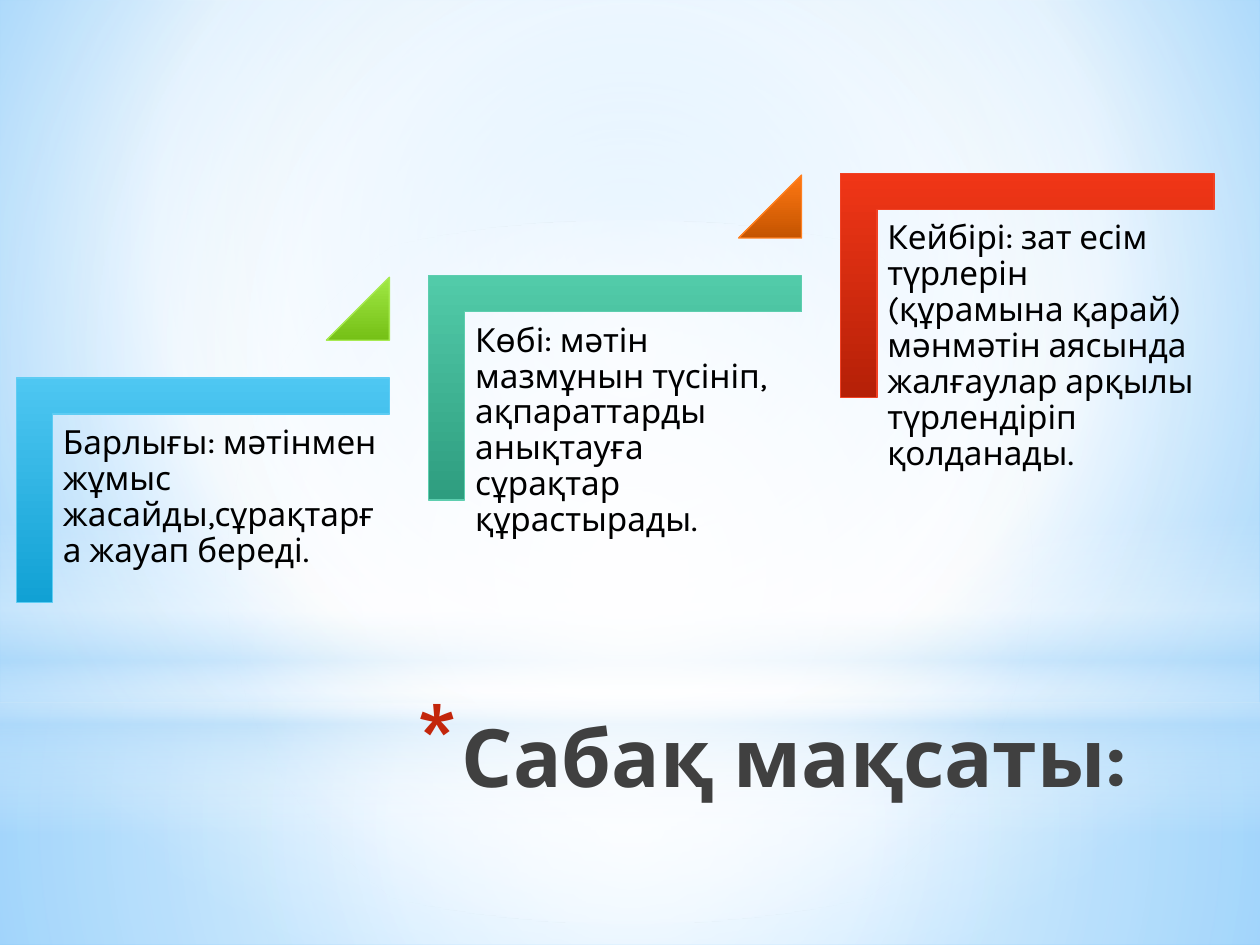
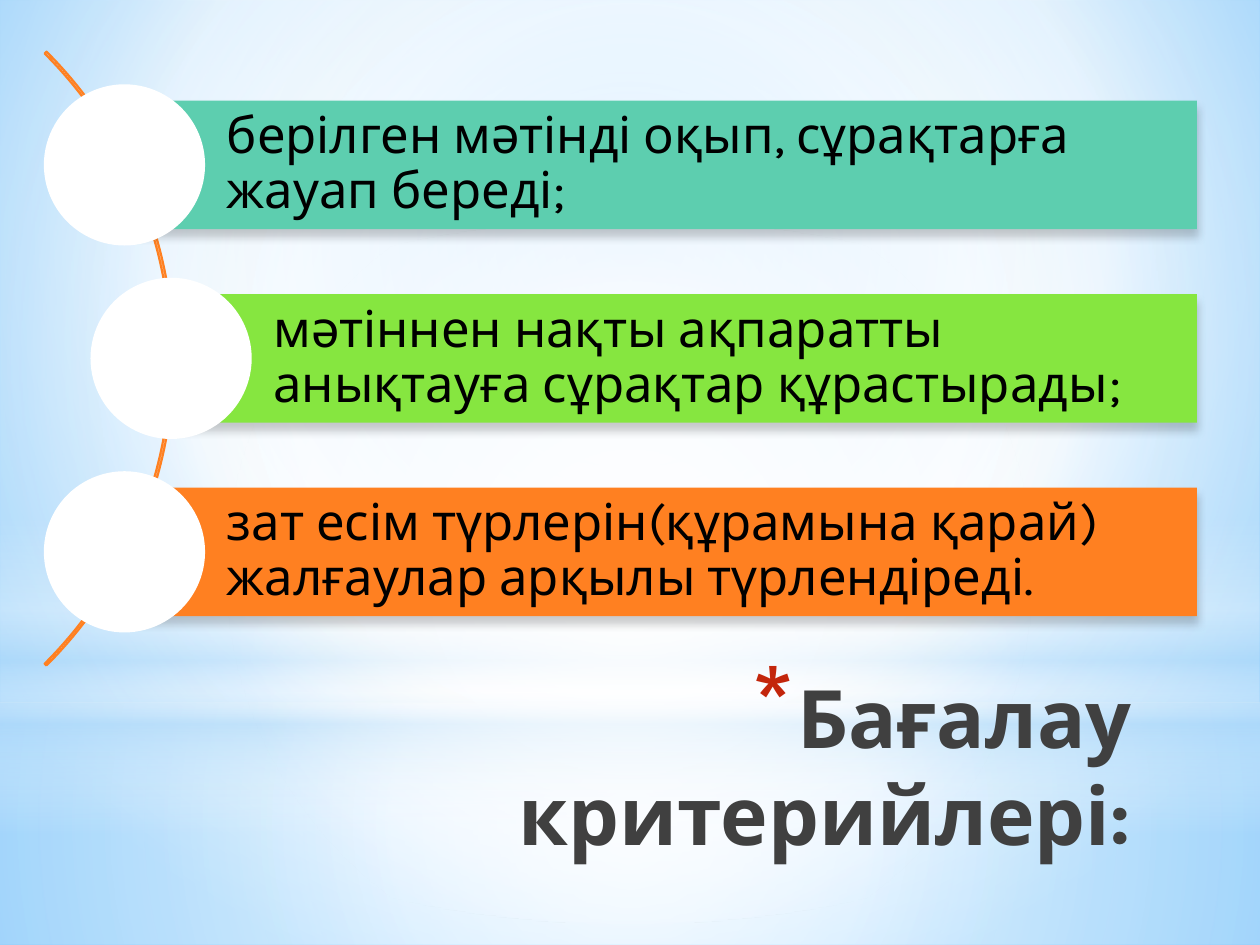
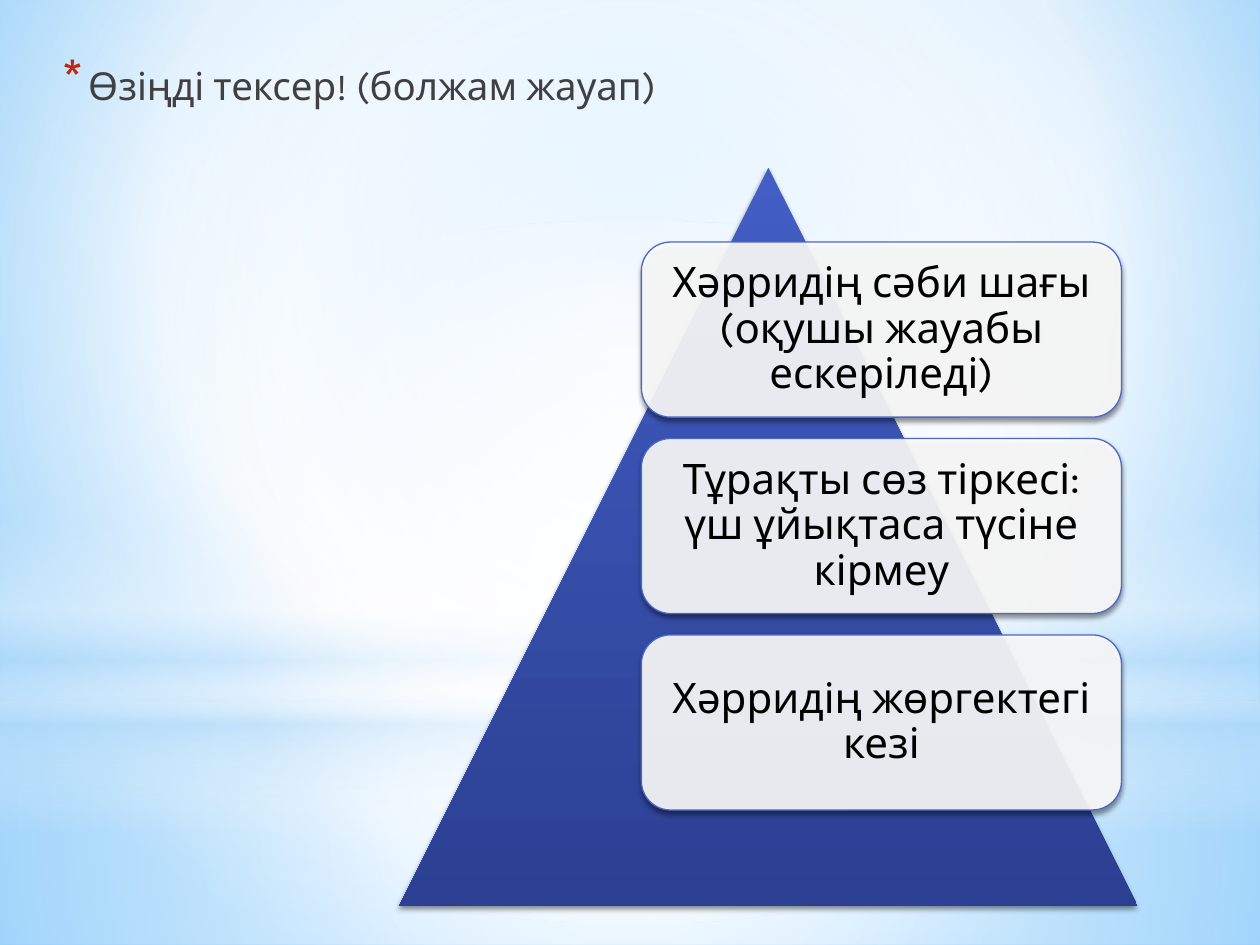
"""Build three lesson slides: goals, assessment criteria and a self-check pyramid."""
from lxml import etree
from pptx import Presentation
from pptx import util as u
from pptx.dml.color import RGBColor
from pptx.enum import shapes, text
from pptx.oxml.ns import qn

FONT = "Karla"
BLACK, GREY, WHITE, BULLET_RED = "000000", "404040", "FFFFFF", "C3260C"
PALE = "B4DCFA"
WIDTH, HEIGHT = 25.4, 19.05
KIND = shapes.MSO_SHAPE
CENTRE = (50, 50, 50, 50)

BACKGROUND = [(0, "9ED5FF"), (60, WHITE), (100, "5BB9FF")]
BACKGROUND_FOCUS = (20, 10, 20, 60)
GLOWS = [
    (KIND.RECTANGLE, 14.17, 4.88, CENTRE, [(0, WHITE, 91), (37, WHITE, 76), (100, PALE, 79)]),
    (KIND.RECTANGLE, 0, 14.17, CENTRE, [(0, WHITE, 89), (48, WHITE, 62), (100, PALE, 79)]),
    (KIND.RECTANGLE, 10.46, 6.35, None,
     [(0, WHITE, 0), (29, WHITE, 30), (45, PALE, 40), (55, WHITE, 26), (65, PALE, 60), (100, WHITE, 0)]),
    (KIND.OVAL, 4.45, 14.17, CENTRE, [(0, WHITE), (56, WHITE, 0)]),
]

GOALS_TITLE = "Сабақ мақсаты:"
GOALS = [
    ("Барлығы: мәтінмен жұмыс жасайды,сұрақтарға жауап береді.", "4EC7F2", "11A1D4", "5ECCF3"),
    ("Көбі: мәтін мазмұнын түсініп, ақпараттарды анықтауға сұрақтар құрастырады.",
     "52CBA9", "2E9D7F", "5DCEAF"),
    ("Кейбірі: зат есім түрлерін (құрамына қарай) мәнмәтін аясында жалғаулар арқылы "
     "түрлендіріп қолданады.", "F03617", "B52007", "F14124"),
]
STEP_TRIANGLES = [("A0E844", "75C016", "A7EA52"), ("FF7813", "C45400", "FF8021")]
STEP_RUN, STEP_RISE = 8.31, 2.06

CRITERIA_TITLE = "Бағалау критерийлері:"
CRITERIA = [
    ("берілген мәтінді оқып, сұрақтарға жауап береді;", "5DCEAF", 2.51),
    ("мәтіннен нақты ақпаратты анықтауға сұрақтар құрастырады;", "86E640", 3.45),
    ("зат есім түрлерін(құрамына қарай) жалғаулар арқылы түрлендіреді.", "FF8021", 2.51),
]
BAR_TOP, BAR_HEIGHT, BAR_PITCH, BAR_RIGHT, CIRCLE = 2.03, 2.59, 3.9, 24.13, 3.25
BAR_SHADOW = (20, 5, 4)

CHECK_TITLE = "Өзіңді тексер! (болжам жауап)"
ANSWERS = [
    "Хәрридің сәби шағы (оқушы жауабы ескеріледі)",
    "Тұрақты сөз тіркесі: үш ұйықтаса түсіне кірмеу",
    "Хәрридің жөргектегі кезі",
]
ANSWER_TOP, ANSWER_PITCH = 4.88, 3.96
PYRAMID_SHADOW = (45, 3.1, 1.8)


def rgb(value):
    """Turn a hex string into a colour."""
    return RGBColor.from_string(value)


def add_xml(parent, tag, **attributes):
    """Append a drawing element with its attributes."""
    return etree.SubElement(parent, qn("a:" + tag), {k: str(v) for k, v in attributes.items()})


def add_colour(parent, value, alpha=100):
    """Append a hex colour with an opacity in percent."""
    colour = add_xml(parent, "srgbClr", val=value)
    if alpha < 100:
        add_xml(colour, "alpha", val=alpha * 1000)


def gradient(parent, stops, focus=None):
    """Swap the solid fill of a parent for a vertical or circular gradient."""
    solid = parent.find(qn("a:solidFill"))
    fill = etree.Element(qn("a:gradFill"), rotWithShape="0")
    stop_list = add_xml(fill, "gsLst")
    for position, *colour in stops:
        add_colour(add_xml(stop_list, "gs", pos=position * 1000), *colour)
    if focus:
        circle = add_xml(fill, "path", path="circle")
        add_xml(circle, "fillToRect", **{side: value * 1000 for side, value in zip("ltrb", focus)})
    else:
        add_xml(fill, "lin", ang=90 * 60000, scaled=0)
    parent.replace(solid, fill)


def add_shape(slide, kind, box, fill=None, line=None, weight=0.75, alpha=100,
              focus=None, shadow=None, adjust=()):
    """Draw a preset shape with a hex or gradient fill."""
    shape = slide.shapes.add_shape(kind, *map(u.Cm, box))
    for index, value in enumerate(adjust):
        shape.adjustments[index] = value
    properties = shape.element.spPr
    if fill:
        shape.fill.solid()
        if isinstance(fill, str):
            solid = properties.find(qn("a:solidFill"))
            solid.clear()
            add_colour(solid, fill, alpha)
        else:
            gradient(properties, fill, focus)
    else:
        shape.fill.background()
    if line:
        shape.line.color.rgb = rgb(line)
        shape.line.width = u.Pt(weight)
    else:
        shape.line.fill.background()
    shape.shadow.inherit = False
    if shadow:
        opacity, blur, distance = shadow
        effect = add_xml(properties.find(qn("a:effectLst")), "outerShdw", blurRad=u.Pt(blur),
                         dist=u.Pt(distance), dir=90 * 60000, rotWithShape=0)
        add_colour(effect, BLACK, opacity)
    return shape


def add_corner(slide, box, fill, line):
    """Draw an L-shaped corner turned so that its arms run right and down."""
    corner = add_shape(slide, KIND.RECTANGLE, box, fill, line)
    geometry = corner.element.spPr.find(qn("a:prstGeom"))
    geometry.set("prst", "corner")
    guides = geometry.find(qn("a:avLst"))
    for name in ("adj1", "adj2"):
        add_xml(guides, "gd", name=name, fmla="val 16100")
    corner.rotation = 90


def write(shape, words, size, colour=BLACK, bold=False, align=text.PP_ALIGN.LEFT,
          anchor=text.MSO_ANCHOR.TOP, insets=(0.25, 0.13, 0.25, 0.13), spacing=None, bullet=None):
    """Put one paragraph into a shape, with an optional asterisk bullet."""
    frame = shape.text_frame
    frame.word_wrap = True
    frame.vertical_anchor = anchor
    frame.margin_left, frame.margin_top, frame.margin_right, frame.margin_bottom = map(u.Cm, insets)
    paragraph = frame.paragraphs[0]
    paragraph.alignment = align
    if spacing:
        paragraph.line_spacing = spacing
    if bullet:
        margin, indent, percent = bullet
        properties = paragraph._p.get_or_add_pPr()
        properties.set("marL", str(u.Cm(margin)))
        properties.set("indent", str(u.Cm(indent)))
        add_colour(add_xml(properties, "buClr"), BULLET_RED)
        add_xml(properties, "buSzPct", val=percent * 1000)
        add_xml(properties, "buChar", char="*")
    run = paragraph.add_run()
    run.text = words
    run.font.name, run.font.size, run.font.bold = FONT, u.Pt(size), bold
    run.font.color.rgb = rgb(colour)


def add_text(slide, box, words, size, **style):
    """Add a text box."""
    write(slide.shapes.add_textbox(*map(u.Cm, box)), words, size, **style)


def add_title(slide, box, words):
    """Add the large right-aligned title."""
    add_text(slide, box, words, 46, colour=GREY, bold=True, align=text.PP_ALIGN.RIGHT,
             bullet=(0.89, -0.89, 128))


def add_slide(presentation):
    """Add a blank slide with the shared sky background."""
    slide = presentation.slides.add_slide(presentation.slide_layouts[6])
    slide.background.fill.solid()
    gradient(slide.element.find(".//" + qn("p:bgPr")), BACKGROUND, BACKGROUND_FOCUS)
    for kind, top, height, focus, stops in GLOWS:
        add_shape(slide, kind, (0, top, WIDTH, height), stops, focus=focus)
    return slide


def build_goals(slide):
    """Draw the rising steps of the lesson goals."""
    for index, (words, light, dark, edge) in enumerate(GOALS):
        across, up = index * STEP_RUN, index * STEP_RISE
        add_corner(slide, (1.83 + across, 6.12 - up, 4.52, 7.52), [(0, light), (100, dark)], edge)
        add_text(slide, (1.07 + across, 8.38 - up, 6.78, 5.94), words, 19,
                 insets=(0.2,) * 4, spacing=0.9)
        if index < len(STEP_TRIANGLES):
            light, dark, edge = STEP_TRIANGLES[index]
            add_shape(slide, KIND.ISOSCELES_TRIANGLE, (6.58 + across, 5.59 - up, 1.27, 1.27),
                      [(0, light), (100, dark)], edge, adjust=(1,))
    add_title(slide, (4.9, 14.12, 18.08, 3.18), GOALS_TITLE)


def build_criteria(slide):
    """Draw the criteria bars along an arc."""
    add_shape(slide, KIND.BLOCK_ARC, (-14, -1.52, 17.5, 17.5), line="FF8021", weight=1.25,
              adjust=(189, 27, 0.003))
    for index, (words, colour, left) in enumerate(CRITERIA):
        top = BAR_TOP + index * BAR_PITCH
        bar = add_shape(slide, KIND.RECTANGLE, (left, top, BAR_RIGHT - left, BAR_HEIGHT), colour,
                        shadow=BAR_SHADOW)
        write(bar, words, 29, anchor=text.MSO_ANCHOR.MIDDLE, insets=(2.06, 0.2, 0.2, 0.2), spacing=0.9)
        add_shape(slide, KIND.OVAL,
                  (left - CIRCLE / 2, top + (BAR_HEIGHT - CIRCLE) / 2, CIRCLE, CIRCLE), WHITE)
    add_title(slide, (4.98, 13.34, 18.08, 2.79), CRITERIA_TITLE)


def build_check(slide):
    """Draw the pyramid with the expected answers."""
    add_text(slide, (0.89, 1.12, 23.39, 17.2), CHECK_TITLE, 22, colour=GREY, bullet=(0.64, -0.51, 130))
    add_shape(slide, KIND.ISOSCELES_TRIANGLE, (8.05, 3.38, 14.88, 14.88),
              [(0, "435EC5"), (100, "2B4092")], shadow=PYRAMID_SHADOW)
    for index, words in enumerate(ANSWERS):
        card = add_shape(slide, KIND.ROUNDED_RECTANGLE,
                         (12.93, ANSWER_TOP + index * ANSWER_PITCH, 9.68, 3.53), WHITE, "4E67C8",
                         alpha=90, shadow=PYRAMID_SHADOW)
        write(card, words, 24, align=text.PP_ALIGN.CENTER, anchor=text.MSO_ANCHOR.MIDDLE,
              insets=(0.25,) * 4, spacing=0.9)


def main():
    """Build and save the presentation."""
    presentation = Presentation()
    presentation.slide_width, presentation.slide_height = u.Cm(WIDTH), u.Cm(HEIGHT)
    for build in (build_goals, build_criteria, build_check):
        build(add_slide(presentation))
    presentation.save("out.pptx")


if __name__ == "__main__":
    main()
